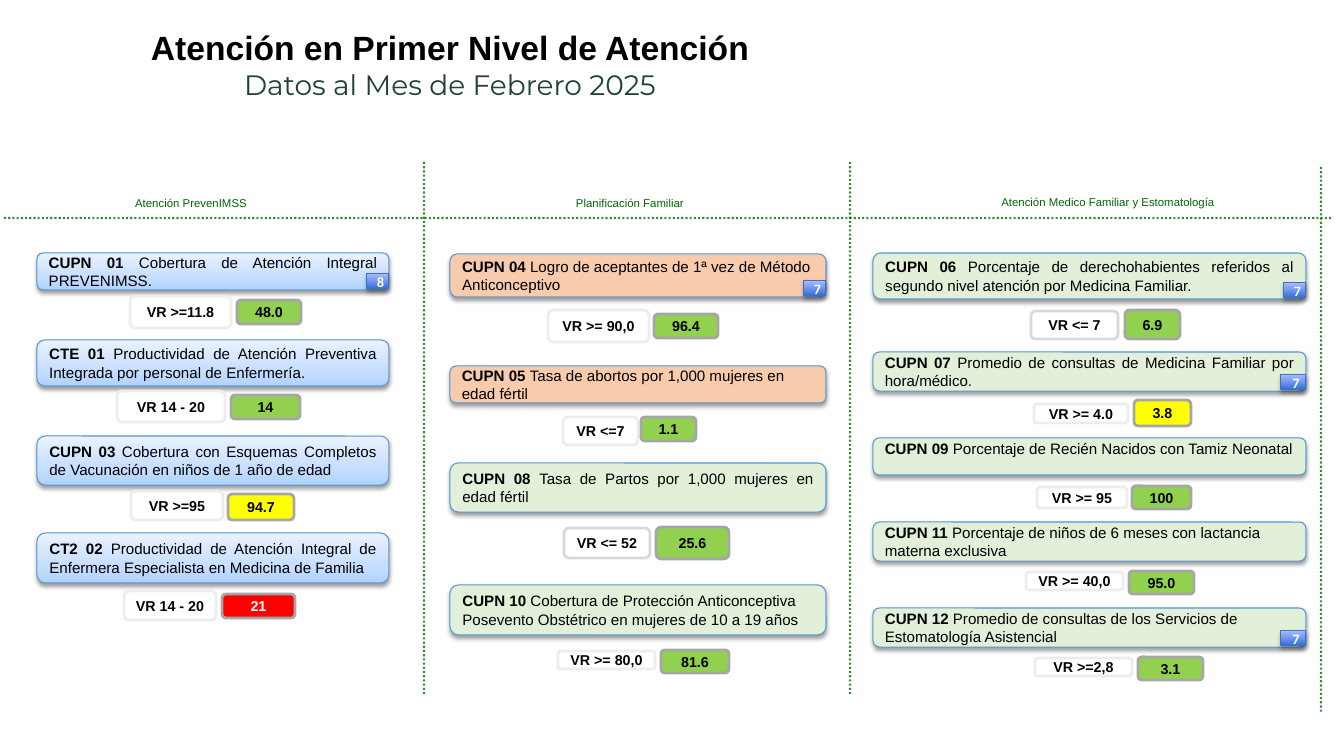
import copy
import pptx
import pptx.util
import pptx.dml.color
import pptx.enum.dml
import pptx.enum.shapes
import pptx.enum.text
import pptx.oxml
import pptx.oxml.ns

THEME = {
    "heading": "006600", "rule": "006800", "text": "000000", "light_text": "FFFFFF",
    "subtitle": "1E4236", "card_line": "5698D3", "badge_line": "3F6FC3",
    "blue": [(0, "B0D2FF"), (35, "C7DEFF"), (100, "EAF2FF")],
    "badge": [(0, "316DD7"), (100, "A6BBFF")],
    "orange": "F8CBAD", "pale_green": "E2F0D9", "white": "FFFFFF",
    "good": "92D050", "warning": "FFFF00", "bad": "FF0000",
    "pale_gray": "EDEDED", "light_gray": "D9D9D9", "value_line": "A6A6A6",
    "font": "Arial", "badge_font": "Calibri", "subtitle_font": "Montserrat",
    "title_size": 24, "subtitle_size": 20, "heading_size": 8.1,
    "card_size": 10.8, "pill_size": 10.2,
}

SLIDE_SIZE = (1344, 756)
TITLE_BOX = (4, 24, 892, 82)
TITLE = "Atención en Primer Nivel de Atención"
SUBTITLE = "Datos al Mes de Febrero 2025"
RULES = [(4, 218, 1333, 218), (1321, 167, 1321, 713), (424, 162, 424, 695), (850, 162, 850, 695)]

# pylint: disable=line-too-long
COLUMNS = [
    {"heading": "Atención PrevenIMSS", "heading_box": (125, 193, 132, 22), "left": 37, "width": 352, "cards": [
        ("CUPN 01", "Cobertura de Atención Integral PREVENIMSS.", 253, 37, "blue", "justify", ("8", 22),
         "VR >=11.8", (130, 296, 101, 32), "pale_gray", "48.0", (237, 300, 64, 24), "good"),
        ("CTE 01", "Productividad de Atención Preventiva Integrada por personal de Enfermería.", 340, 46, "blue", "justify", None,
         "VR 14 - 20", (117, 391, 108, 31), "pale_gray", "14", (231, 395, 69, 24), "good"),
        ("CUPN 03", "Cobertura con Esquemas Completos de Vacunación en niños de 1 año de edad", 436, 49, "blue", "justify", None,
         "VR >=95", (131, 491, 92, 29), "pale_gray", "94.7", (228, 494, 66, 26), "warning"),
        ("CT2 02", "Productividad de Atención Integral de Enfermera Especialista en Medicina de Familia", 533, 50, "blue", "justify", None,
         "VR 14 - 20", (124, 591, 92, 29), "pale_gray", "21", (222, 594, 73, 24), "bad"),
    ]},
    {"heading": "Planificación Familiar", "heading_box": (564, 193, 132, 22), "left": 450, "width": 376, "cards": [
        ("CUPN 04", "Logro de aceptantes de 1ª vez de Método Anticonceptivo", 254, 43, "orange", "left", ("7", 22),
         "VR >= 90,0", (548, 310, 101, 32), "pale_gray", "96.4", (654, 314, 64, 24), "good"),
        ("CUPN 05", "Tasa de abortos por 1,000 mujeres en edad fértil", 366, 37, "orange", "left", None,
         "VR <=7", (563, 417, 75, 28), "pale_gray", "1.1", (641, 417, 55, 24), "good"),
        ("CUPN 08", "Tasa de Partos por 1,000 mujeres en edad fértil", 463, 49, "pale_green", "justify", None,
         "VR <= 52", (564, 528, 86, 30), "light_gray", "25.6", (656, 527, 73, 32), "good"),
        ("CUPN 10", "Cobertura de Protección Anticonceptiva Posevento Obstétrico en mujeres de 10 a 19 años", 585, 50, "pale_green", "left", None,
         "VR >= 80,0", (558, 651, 97, 18), "pale_gray", "81.6", (661, 650, 68, 23), "good"),
    ]},
    {"heading": "Atención Medico Familiar y Estomatología", "heading_box": (963, 192, 290, 22), "left": 873, "width": 433, "cards": [
        ("CUPN 06", "Porcentaje de derechohabientes referidos al segundo nivel atención por Medicina Familiar.", 253, 46, "pale_green", "justify", ("7", 22),
         "VR <= 7", (1031, 311, 87, 28), "light_gray", "6.9", (1125, 310, 55, 29), "good"),
        ("CUPN 07", "Promedio de consultas de Medicina Familiar por hora/médico.", 352, 39, "pale_green", "justify", ("7", 25),
         "VR >= 4.0", (1034, 404, 94, 19), "pale_gray", "3.8", (1134, 400, 57, 26), "warning"),
        ("CUPN 09", "Porcentaje de Recién Nacidos con Tamiz Neonatal", 438, 37, "pale_green", "top", None,
         "VR >= 95", (1037, 487, 90, 21), "pale_gray", "100", (1132, 486, 59, 23), "good"),
        ("CUPN 11", "Porcentaje de niños de 6 meses con lactancia materna exclusiva", 522, 39, "pale_green", "left", None,
         "VR >= 40,0", (1026, 572, 97, 18), "pale_gray", "95.0", (1129, 571, 65, 23), "good"),
        ("CUPN 12", "Promedio de consultas de los Servicios de Estomatología Asistencial", 608, 39, "pale_green", "left", ("7", 25),
         "VR >=2,8", (1035, 658, 97, 18), "pale_gray", "3.1", (1138, 657, 65, 23), "good"),
    ]},
]

ALIGN = pptx.enum.text.PP_ALIGN
ANCHOR = pptx.enum.text.MSO_ANCHOR
SHAPES = pptx.enum.shapes.MSO_SHAPE
qn = pptx.oxml.ns.qn
BADGE_HEIGHT = 15


def px(length):
    return round(length * 914400 / 100.8)


def rgb(name):
    return pptx.dml.color.RGBColor.from_string(THEME[name])


def set_font(font, size, color="text", bold=False, name="font"):
    font.name = THEME[name]
    font.size = pptx.util.Pt(THEME[size])
    font.bold = bold
    font.color.rgb = rgb(color)


def set_frame(frame, margins, anchor=ANCHOR.MIDDLE):
    frame.word_wrap = True
    frame.vertical_anchor = anchor
    frame.margin_left, frame.margin_top, frame.margin_right, frame.margin_bottom = map(px, margins)


def fill_gradient(shape, stops):
    shape.fill.gradient()
    shape.fill.gradient_angle = 90
    stop_list = shape._element.spPr.find(qn("a:gradFill")).find(qn("a:gsLst"))
    while len(stop_list) < len(stops):
        stop_list.append(copy.deepcopy(stop_list[-1]))
    for stop, (position, color) in zip(shape.fill.gradient_stops, stops):
        stop.position = position / 100
        stop.color.rgb = pptx.dml.color.RGBColor.from_string(color)


def add_shadow(shape, opacity):
    effects = shape._element.spPr.find(qn("a:effectLst"))
    effects.append(pptx.oxml.parse_xml(
        f'<a:outerShdw {pptx.oxml.ns.nsdecls("a")} blurRad="39370" dist="21000" dir="5400000" '
        f'rotWithShape="0"><a:srgbClr val="000000"><a:alpha val="{opacity * 1000}"/>'
        '</a:srgbClr></a:outerShdw>'))


def add_block(slide, kind, box, fill, line, width):
    shape = slide.shapes.add_shape(kind, *map(px, box))
    shape.shadow.inherit = False
    if isinstance(THEME[fill], list):
        fill_gradient(shape, THEME[fill])
    else:
        shape.fill.solid()
        shape.fill.fore_color.rgb = rgb(fill)
    shape.line.color.rgb = rgb(line)
    shape.line.width = pptx.util.Pt(width)
    return shape


def add_label(shape, text, color, margins=(0, 0, 0, 0), name="font"):
    set_frame(shape.text_frame, margins)
    paragraph = shape.text_frame.paragraphs[0]
    paragraph.text = text
    paragraph.alignment = ALIGN.CENTER
    set_font(paragraph.font, "pill_size", color, True, name)


def add_rule(slide, ends):
    rule = slide.shapes.add_connector(pptx.enum.shapes.MSO_CONNECTOR.STRAIGHT, *map(px, ends))
    rule.line.color.rgb = rgb("rule")
    rule.line.width = pptx.util.Pt(1.5)
    rule.line.dash_style = pptx.enum.dml.MSO_LINE.ROUND_DOT
    properties = rule._element.spPr
    color = properties.find(".//" + qn("a:srgbClr"))
    color.append(pptx.oxml.parse_xml(f'<a:alpha {pptx.oxml.ns.nsdecls("a")} val="77000"/>'))
    properties.append(pptx.oxml.parse_xml(f'<a:effectLst {pptx.oxml.ns.nsdecls("a")}/>'))


def add_heading(slide, text, box):
    frame = slide.shapes.add_textbox(*map(px, box)).text_frame
    set_frame(frame, (0, 5, 0, 5), ANCHOR.TOP)
    paragraph = frame.paragraphs[0]
    paragraph.text = text
    paragraph.alignment = ALIGN.CENTER
    paragraph.line_spacing = 0.9
    set_font(paragraph.font, "heading_size", "heading")


def add_card(slide, left, width, card):
    code, text, top, height, fill, layout, badge, target, target_box, target_line, value, value_box, status = card
    shape = add_block(slide, SHAPES.ROUNDED_RECTANGLE, (left, top, width, height), fill, "card_line", 0.75)
    add_shadow(shape, 38)
    if layout == "top":
        set_frame(shape.text_frame, (10, 0, 10, 0), ANCHOR.TOP)
    else:
        set_frame(shape.text_frame, (10, 5, 10, 5))
    paragraph = shape.text_frame.paragraphs[0]
    paragraph.alignment = ALIGN.JUSTIFY if layout == "justify" else ALIGN.LEFT
    for words, bold in ((code + " ", True), (text, False)):
        run = paragraph.add_run()
        run.text = words
        set_font(run.font, "card_size", bold=bold)
    if badge:
        number, badge_width = badge
        box = (left + width - badge_width, top + height - BADGE_HEIGHT - 1, badge_width, BADGE_HEIGHT)
        marker = add_block(slide, SHAPES.RECTANGLE, box, "badge", "badge_line", 0.75)
        add_shadow(marker, 35)
        add_label(marker, number, "light_text", (5, 0, 0, 0), "badge_font")
    pill = add_block(slide, SHAPES.ROUNDED_RECTANGLE, target_box, "white", target_line, 2)
    add_label(pill, target, "text")
    pill = add_block(slide, SHAPES.ROUNDED_RECTANGLE, value_box, status, "value_line", 2)
    add_label(pill, value, "light_text" if status == "bad" else "text")


def add_title(slide):
    frame = slide.shapes.add_textbox(*map(px, TITLE_BOX)).text_frame
    set_frame(frame, (7, 3, 7, 3), ANCHOR.TOP)
    title, subtitle = frame.paragraphs[0], frame.add_paragraph()
    title.text, subtitle.text = TITLE, SUBTITLE
    title.alignment = subtitle.alignment = ALIGN.CENTER
    set_font(title.font, "title_size", bold=True)
    set_font(subtitle.font, "subtitle_size", "subtitle", name="subtitle_font")


def main():
    presentation = pptx.Presentation()
    presentation.slide_width, presentation.slide_height = map(px, SLIDE_SIZE)
    slide = presentation.slides.add_slide(presentation.slide_layouts[6])
    for ends in RULES:
        add_rule(slide, ends)
    for column in COLUMNS:
        add_heading(slide, column["heading"], column["heading_box"])
        for card in column["cards"]:
            add_card(slide, column["left"], column["width"], card)
    add_title(slide)
    presentation.save("out.pptx")


if __name__ == "__main__":
    main()
